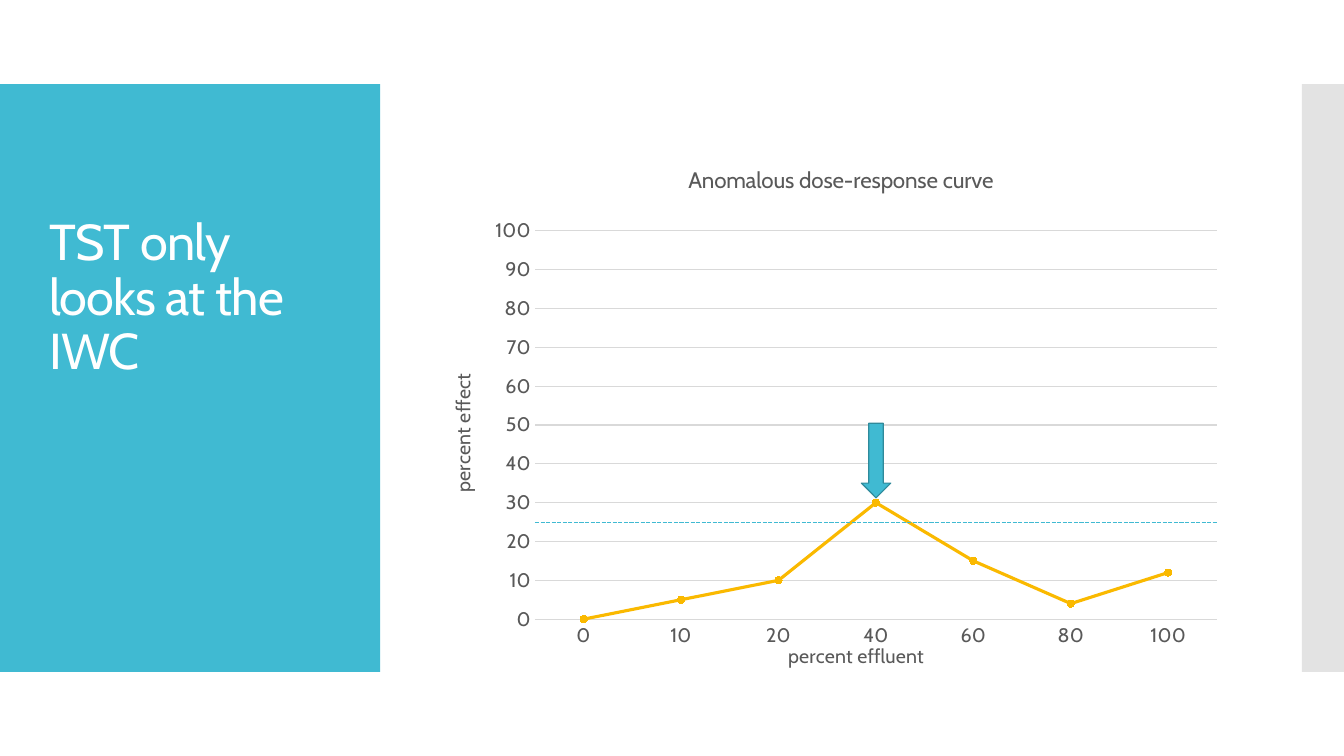
from dataclasses import dataclass

from lxml import etree
from pptx import Presentation
from pptx.chart.data import CategoryChartData
from pptx.dml.color import RGBColor
from pptx.enum import chart as charts, dml, shapes, text
from pptx.oxml import parse_xml
from pptx.oxml.ns import nsdecls, qn
from pptx.util import Pt

TITLE = "TST only looks at the IWC"
CHART_TITLE = "Anomalous dose-response curve"
EFFLUENT_TITLE = "percent effluent"
EFFECT_TITLE = "percent effect"
SERIES_NAME = "Series 1"
EFFECT_BY_EFFLUENT = {"0": 0, "10": 5, "20": 10, "40": 30, "60": 15, "80": 4, "100": 12}
EFFECT_MAX = 100
EFFECT_LIMIT = 25
IWC = "40"


@dataclass(frozen=True)
class Theme:
    font: str = "Cabin"
    teal: str = "40BAD2"
    arrow_edge: str = "2F8A9B"
    side_gray: str = "C8C8C8"
    series: str = "FAB900"
    grid: str = "D9D9D9"
    ink: str = "595959"
    white: str = "FFFFFF"
    title_size: float = 36
    chart_title_size: float = 16
    axis_size: float = 14


THEME = Theme()

SLIDE_WIDTH, SLIDE_HEIGHT = 960, 540
BAND_TOP, BAND_HEIGHT = 60, 420
PANEL_WIDTH, SIDE_WIDTH = 271.5, 30
TITLE_BOX = (28, 72.7, 191.5, 281.5)
CHART_LEFT, CHART_TOP, CHART_WIDTH, CHART_HEIGHT = 318.25, 103.7, 565.2, 378
PLOT = {"x": 0.113, "y": 0.162, "w": 0.862, "h": 0.734}  # shares of the chart frame
ARROW_WIDTH, ARROW_HEIGHT, ARROW_GAP = 21, 53.3, 3.5

PLOT_LEFT = CHART_LEFT + PLOT["x"] * CHART_WIDTH
PLOT_TOP = CHART_TOP + PLOT["y"] * CHART_HEIGHT
PLOT_WIDTH = PLOT["w"] * CHART_WIDTH
PLOT_HEIGHT = PLOT["h"] * CHART_HEIGHT


def rgb(color):
    return RGBColor.from_string(color)


def effect_y(effect):
    return PLOT_TOP + PLOT_HEIGHT * (1 - effect / EFFECT_MAX)


def effluent_x(effluent):
    position = list(EFFECT_BY_EFFLUENT).index(effluent) + 0.5
    return PLOT_LEFT + PLOT_WIDTH * position / len(EFFECT_BY_EFFLUENT)


def set_line(line, color, width):
    line.color.rgb = rgb(color)
    line.width = Pt(width)


def style_font(font, size, color):
    font.name = THEME.font
    font.size = Pt(size)
    font.bold = False
    font.color.rgb = rgb(color)


def add_filled(slide, kind, box, color):
    shape = slide.shapes.add_shape(kind, *map(Pt, box))
    shape.shadow.inherit = False
    shape.fill.solid()
    shape.fill.fore_color.rgb = rgb(color)
    shape.line.fill.background()
    return shape


def add_bands(slide):
    rectangle = shapes.MSO_SHAPE.RECTANGLE
    add_filled(slide, rectangle, (0, BAND_TOP, PANEL_WIDTH, BAND_HEIGHT), THEME.teal)
    side_box = (SLIDE_WIDTH - SIDE_WIDTH, BAND_TOP, SIDE_WIDTH, BAND_HEIGHT)
    side = add_filled(slide, rectangle, side_box, THEME.side_gray)
    color = side.fill._xPr.find(".//" + qn("a:srgbClr"))
    etree.SubElement(color, qn("a:alpha")).set("val", "50000")


def add_title(slide):
    frame = slide.shapes.add_textbox(*map(Pt, TITLE_BOX)).text_frame
    frame.word_wrap = True
    frame.vertical_anchor = text.MSO_ANCHOR.MIDDLE
    paragraph = frame.paragraphs[0]
    paragraph.line_spacing = 0.9
    run = paragraph.add_run()
    run.text = TITLE
    style_font(run.font, THEME.title_size, THEME.white)
    run.font._element.set("spc", "-60")


def set_chart_text(owner, words, size):
    """Give a chart or an axis its title."""
    owner.has_title = True
    title = owner.chart_title if hasattr(owner, "chart_title") else owner.axis_title
    run = title.text_frame.paragraphs[0].add_run()
    run.text = words
    style_font(run.font, size, THEME.ink)


def fix_plot_area(chart):
    """Pin the inner plot area, so that the marks laid over it line up."""
    sizes = "".join(f'<c:{key} val="{share}"/>' for key, share in PLOT.items())
    layout = parse_xml(
        f'<c:layout {nsdecls("c")}><c:manualLayout><c:layoutTarget val="inner"/>'
        f'<c:xMode val="edge"/><c:yMode val="edge"/>{sizes}</c:manualLayout></c:layout>'
    )
    plot_area = chart._chartSpace.chart.plotArea
    for old in plot_area.findall(qn("c:layout")):
        plot_area.remove(old)
    plot_area.insert(0, layout)


def add_curve(slide):
    data = CategoryChartData()
    data.categories = list(EFFECT_BY_EFFLUENT)
    data.add_series(SERIES_NAME, list(EFFECT_BY_EFFLUENT.values()))
    frame = map(Pt, (CHART_LEFT, CHART_TOP, CHART_WIDTH, CHART_HEIGHT))
    chart = slide.shapes.add_chart(charts.XL_CHART_TYPE.LINE_MARKERS, *frame, data).chart
    style_font(chart.font, THEME.axis_size, THEME.ink)
    chart.has_legend = False
    set_chart_text(chart, CHART_TITLE, THEME.chart_title_size)
    fix_plot_area(chart)

    axes = ((chart.category_axis, EFFLUENT_TITLE), (chart.value_axis, EFFECT_TITLE))
    for axis, words in axes:
        set_chart_text(axis, words, THEME.axis_size)
        style_font(axis.tick_labels.font, THEME.axis_size, THEME.ink)
        axis.major_tick_mark = axis.minor_tick_mark = charts.XL_TICK_MARK.NONE
    set_line(chart.category_axis.format.line, THEME.grid, 0.75)
    value_axis = chart.value_axis
    value_axis.minimum_scale, value_axis.maximum_scale = 0, EFFECT_MAX
    value_axis.major_unit = 10
    value_axis.format.line.fill.background()
    set_line(value_axis.major_gridlines.format.line, THEME.grid, 0.75)

    plot = chart.plots[0]
    plot.vary_by_categories = False
    series = plot.series[0]
    series.smooth = False
    set_line(series.format.line, THEME.series, 2.25)
    series.marker.style = charts.XL_MARKER_STYLE.CIRCLE
    series.marker.size = 5
    series.marker.format.fill.solid()
    series.marker.format.fill.fore_color.rgb = rgb(THEME.series)
    set_line(series.marker.format.line, THEME.series, 0.75)


def add_iwc_arrow(slide):
    left = effluent_x(IWC) - ARROW_WIDTH / 2
    top = effect_y(EFFECT_BY_EFFLUENT[IWC]) - ARROW_GAP - ARROW_HEIGHT
    box = (left, top, ARROW_WIDTH, ARROW_HEIGHT)
    arrow = add_filled(slide, shapes.MSO_SHAPE.DOWN_ARROW, box, THEME.teal)
    set_line(arrow.line, THEME.arrow_edge, 0.85)


def add_limit_line(slide):
    y = effect_y(EFFECT_LIMIT)
    ends = map(Pt, (PLOT_LEFT, y, PLOT_LEFT + PLOT_WIDTH, y))
    limit = slide.shapes.add_connector(shapes.MSO_CONNECTOR.STRAIGHT, *ends)
    set_line(limit.line, THEME.teal, 1)
    limit.line.dash_style = dml.MSO_LINE.SQUARE_DOT
    etree.SubElement(limit._element.spPr, qn("a:effectLst"))


def main():
    presentation = Presentation()
    presentation.slide_width = Pt(SLIDE_WIDTH)
    presentation.slide_height = Pt(SLIDE_HEIGHT)
    slide = presentation.slides.add_slide(presentation.slide_layouts[6])
    add_bands(slide)
    add_curve(slide)
    add_title(slide)
    add_iwc_arrow(slide)
    add_limit_line(slide)
    presentation.save("out.pptx")


if __name__ == "__main__":
    main()
